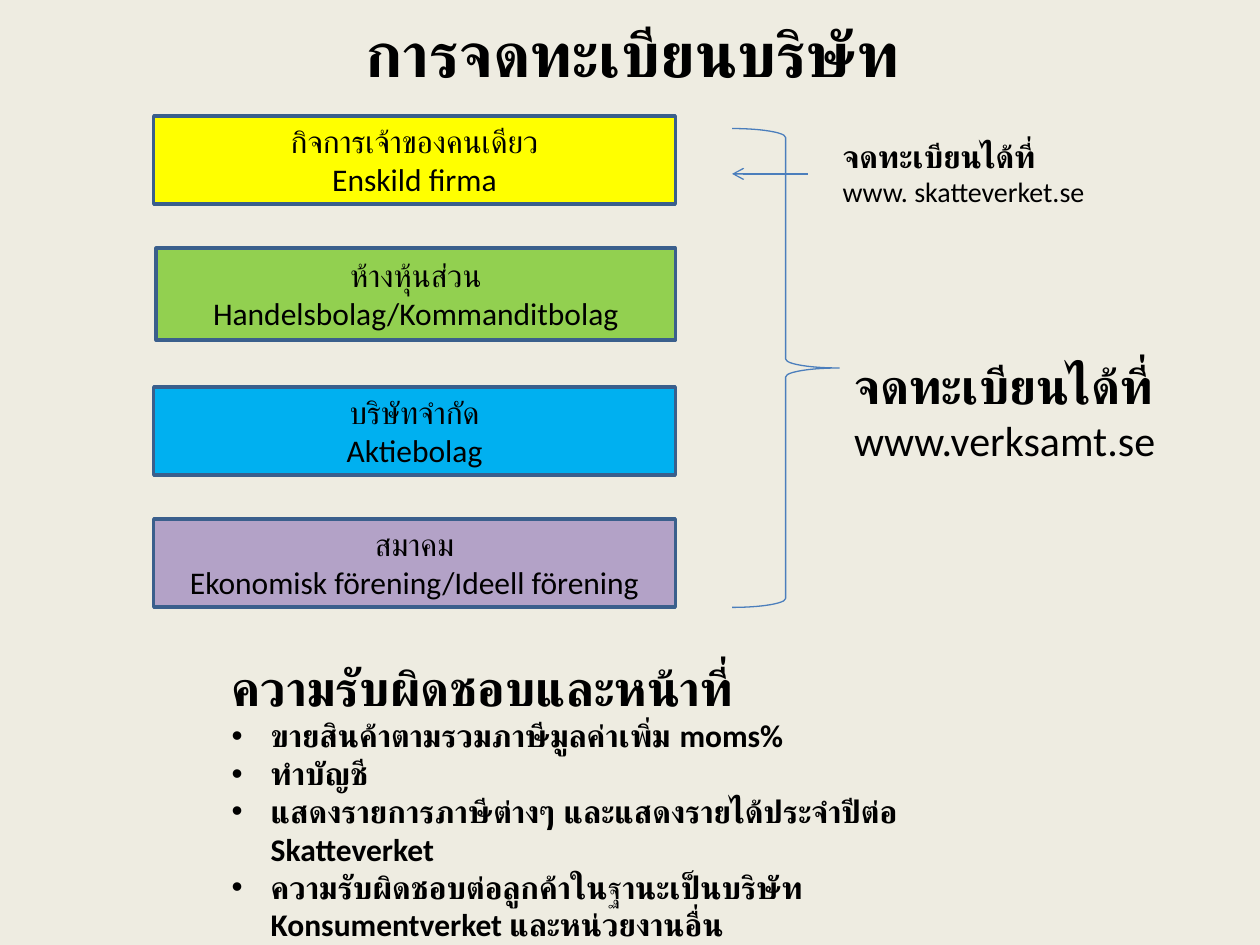
from lxml import etree
from pptx import Presentation
from pptx.dml.color import RGBColor
from pptx.enum import shapes, text
from pptx.oxml import ns
from pptx.util import Inches, Pt

INK, OUTLINE, BRACE = "000000", "3A5F8C", "4B7EBC"
TITLE = "การจดทะเบียนบริษัท"
COMPANY_TYPES = [
    ("กิจการเจ้าของคนเดียว", "Enskild firma", "FFFF00", (1.22, 0.92, 4.14, 0.7)),
    ("ห้างหุ้นส่วน", "Handelsbolag/Kommanditbolag", "92D050", (1.24, 1.97, 4.12, 0.73)),
    ("บริษัทจำกัด", "Aktiebolag", "00B0F0", (1.22, 3.07, 4.14, 0.7)),
    ("สมาคม", "Ekonomisk förening/Ideell förening", "B3A2C7", (1.22, 4.12, 4.14, 0.7)),
]
DUTIES_TITLE = "ความรับผิดชอบและหน้าที่"
DUTIES = [
    [("ขายสินค้าตามรวมภาษีมูลค่าเพิ่ม moms%", True)],
    [("ทำบัญชี", True)],
    [("แสดงรายการภาษีต่างๆ และแสดงรายได้ประจำปีต่อ Skatteverket", True)],
    [("ความรับผิดชอบต่อลูกค้าใน", True), ("ฐ", False),
     ("านะเป็นบริษัท Konsumentverket และหน่วยงานอื่น", True)],
]
REGISTER = "จดทะเบียนได้ที่"
REGISTER_SITES = [
    ("www. skatteverket.se", 18, 16, False, (5.65, 1.04, 3.1, 0.67)),
    ("www.verksamt.se", 28, 24, True, (5.74, 2.77, 4.26, 0.98)),
]


def color(value):
    return RGBColor.from_string(value)


def inches(place):
    return [Inches(value) for value in place]


def style_line(line, value, width):
    line.color.rgb = color(value)
    line.width = Pt(width)


def add_span(para, words, size, bold=False, font="Calibri"):
    span = para.add_run()
    span.text = words
    span.font.size = Pt(size)
    span.font.bold = bold
    span.font.name = font
    span.font.color.rgb = color(INK)


def indent(para, level, margin, first, bullet=None):
    para.level = level
    properties = para._p.get_or_add_pPr()
    properties.set("marL", str(Inches(margin)))
    properties.set("indent", str(Inches(first)))
    if bullet:
        etree.SubElement(properties, ns.qn("a:buFont")).set("typeface", "Arial")
        etree.SubElement(properties, ns.qn("a:buChar")).set("char", bullet)


def add_text_box(page, place, wrap=True):
    frame = page.shapes.add_textbox(*inches(place)).text_frame
    frame.word_wrap = wrap
    frame.auto_size = text.MSO_AUTO_SIZE.SHAPE_TO_FIT_TEXT
    return frame


def add_title(page):
    title = page.shapes.title
    title.left, title.top, title.width, title.height = inches((0.52, 0, 9, 0.83))
    frame = title.text_frame
    frame.auto_size = text.MSO_AUTO_SIZE.NONE
    frame.vertical_anchor = text.MSO_ANCHOR.MIDDLE
    frame.paragraphs[0].alignment = text.PP_ALIGN.CENTER
    add_span(frame.paragraphs[0], TITLE, 36, True, "Arial")


def add_company_type(page, thai, swedish, fill, place):
    box = page.shapes.add_shape(shapes.MSO_SHAPE.RECTANGLE, *inches(place))
    box.shadow.inherit = False
    box.fill.solid()
    box.fill.fore_color.rgb = color(fill)
    style_line(box.line, OUTLINE, 2)
    frame = box.text_frame
    frame.vertical_anchor = text.MSO_ANCHOR.MIDDLE
    for para, words in ((frame.paragraphs[0], thai), (frame.add_paragraph(), swedish)):
        para.alignment = text.PP_ALIGN.CENTER
        add_span(para, words, 18)


def add_duties(page):
    frame = add_text_box(page, (1.24, 5.17, 6.85, 2.09))
    heading = frame.paragraphs[0]
    indent(heading, 1, 0.5, 0)
    add_span(heading, DUTIES_TITLE, 28, True)
    for duty in DUTIES:
        para = frame.add_paragraph()
        indent(para, 1, 0.81, -0.31, "•")
        for words, bold in duty:
            add_span(para, words, 18, bold)


def add_register_site(page, address, heading_size, address_size, wrap, place):
    frame = add_text_box(page, place, wrap)
    lines = [(frame.paragraphs[0], REGISTER, heading_size, True),
             (frame.add_paragraph(), address, address_size, False)]
    for para, words, size, bold in lines:
        indent(para, 2, 1.5, -0.56)
        add_span(para, words, size, bold)


def add_brace(page):
    brace = page.shapes.add_shape(shapes.MSO_SHAPE.LEFT_BRACE, *inches((5.81, 1.02, 0.85, 3.8)))
    brace.rotation = 180
    brace.shadow.inherit = False
    brace.fill.background()
    style_line(brace.line, BRACE, 0.75)


def add_arrow(page):
    arrow = page.shapes.add_connector(
        shapes.MSO_CONNECTOR.STRAIGHT, *inches((6.41, 1.38, 5.81, 1.38)))
    style_line(arrow.line, BRACE, 0.75)
    etree.SubElement(arrow.line._get_or_add_ln(), ns.qn("a:tailEnd")).set("type", "arrow")
    etree.SubElement(arrow._element.spPr, ns.qn("a:effectLst"))


def main():
    deck = Presentation()
    deck.slide_width, deck.slide_height = Inches(10), Inches(7.5)
    page = deck.slides.add_slide(deck.slide_layouts.get_by_name("Title Only"))
    page.background.fill.solid()
    page.background.fill.fore_color.rgb = color("EEECE1")
    add_title(page)
    for company_type in COMPANY_TYPES:
        add_company_type(page, *company_type)
    add_duties(page)
    for site in REGISTER_SITES:
        add_register_site(page, *site)
    add_brace(page)
    add_arrow(page)
    deck.save("out.pptx")


if __name__ == "__main__":
    main()
